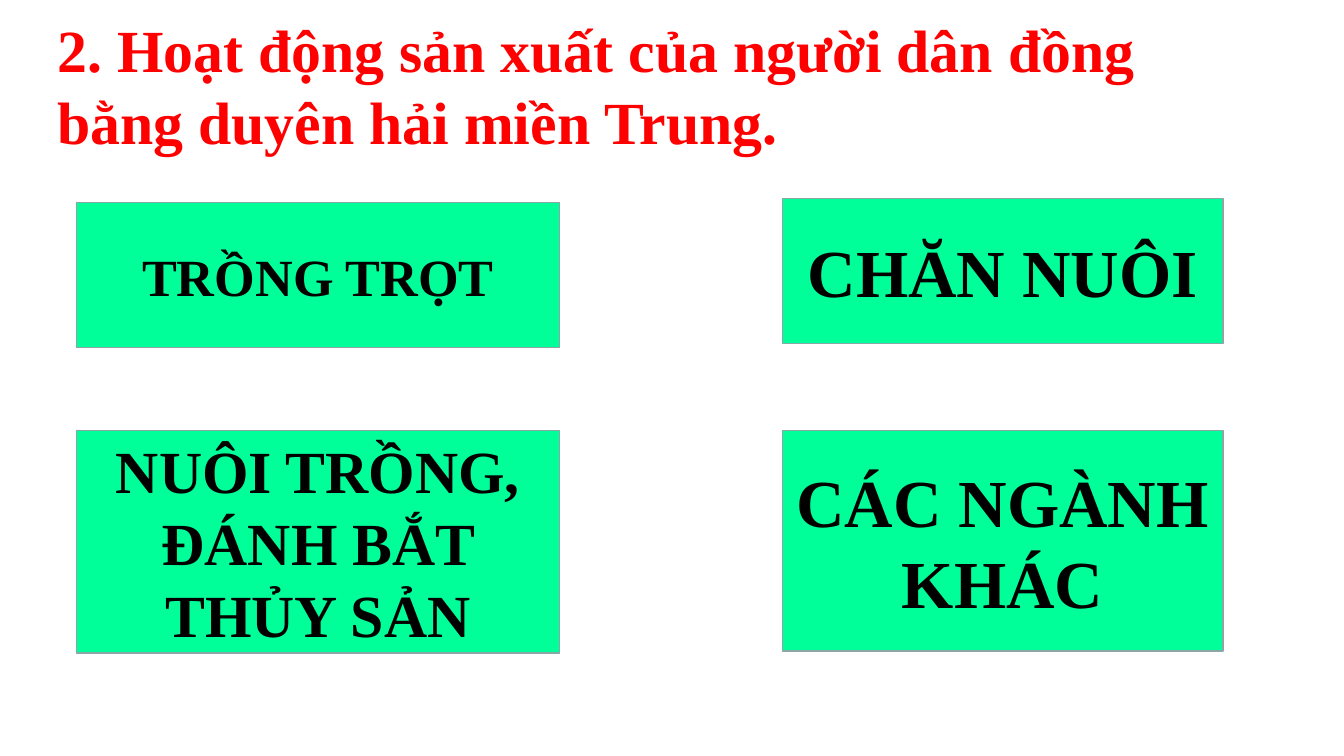
"""Build a slide with a heading and four labelled boxes on production activities."""
from pptx import Presentation
from pptx.dml.color import RGBColor
from pptx.enum.shapes import MSO_SHAPE as SHAPE
from pptx.enum.text import MSO_ANCHOR as ANCHOR, PP_ALIGN as ALIGN
from pptx.util import Inches, Pt


def rgb(code):
    return RGBColor.from_string(code)


def write(sp, text, size, color, align, anchor):
    tf = sp.text_frame
    tf.word_wrap = True
    tf.vertical_anchor = anchor
    p = tf.paragraphs[0]
    p.text = text
    p.alignment = align
    p.font.name = "Times New Roman"
    p.font.size = Pt(size)
    p.font.bold = True
    p.font.color.rgb = rgb(color)


prs = Presentation()
prs.slide_width, prs.slide_height = Inches(13.33), Inches(7.5)
s = prs.slides.add_slide(prs.slide_layouts[6])

columns = [(0.76, 4.79), (7.76, 4.37)]
rows = [
    [("TRỒNG TRỌT", 37.3, 2.01, 1.44), ("CHĂN NUÔI", 48, 1.97, 1.44)],
    [("NUÔI TRỒNG, ĐÁNH BẮT THỦY SẢN", 42.7, 4.27, 2.21),
     ("CÁC NGÀNH KHÁC", 48, 4.27, 2.19)],
]
for row in rows:
    for (left, width), (text, size, top, height) in zip(columns, row):
        sp = s.shapes.add_shape(SHAPE.RECTANGLE, Inches(left), Inches(top),
                                Inches(width), Inches(height))
        sp.shadow.inherit = False
        sp.fill.solid()
        sp.fill.fore_color.rgb = rgb("00FF99")
        sp.line.color.rgb = rgb("8AA6A8")
        sp.line.width = Pt(1)
        write(sp, text, size, "000000", ALIGN.CENTER, ANCHOR.MIDDLE)

heading = s.shapes.add_textbox(Inches(0.47), Inches(0.08), Inches(12.18), Inches(1.54))
write(heading, "2. Hoạt động sản xuất của người dân đồng bằng duyên hải miền Trung.",
      42.7, "FF0000", ALIGN.LEFT, ANCHOR.TOP)

prs.save("out.pptx")
